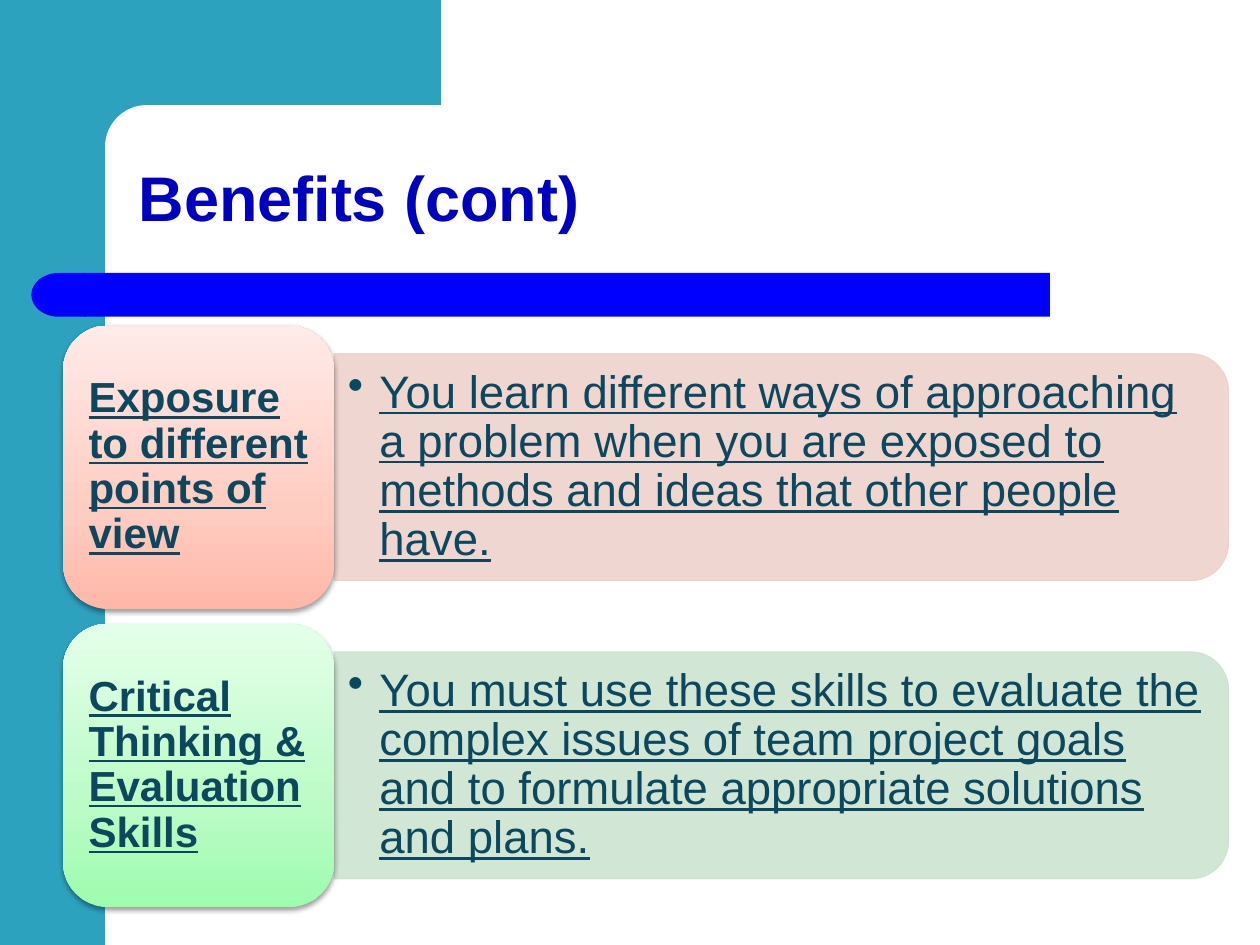
import pptx
import pptx.util
import pptx.dml.color
import pptx.enum.shapes
import pptx.enum.text
import pptx.oxml
import pptx.oxml.ns

Pt = pptx.util.Pt
RGB = pptx.dml.color.RGBColor
KIND = pptx.enum.shapes.MSO_SHAPE
ANCHOR = pptx.enum.text.MSO_ANCHOR
ALIGN = pptx.enum.text.PP_ALIGN
NS = pptx.oxml.ns.nsdecls("a")

TEAL = RGB(0x2D, 0xA2, 0xBF)
WHITE = RGB(0xFF, 0xFF, 0xFF)
BLUE = RGB(0x00, 0x00, 0xFF)
TITLE_BLUE = RGB(0x00, 0x00, 0xBF)
INK = RGB(0x0C, 0x47, 0x5D)
ROSE = RGB(0xEE, 0xD2, 0xCC)
SAGE = RGB(0xCC, 0xE4, 0xD0)
CORAL_STOPS = (RGB(0xFF, 0xB7, 0xA8), RGB(0xFF, 0xCC, 0xC1), RGB(0xFF, 0xEB, 0xE8))
GREEN_STOPS = (RGB(0x9D, 0xFC, 0xAE), RGB(0xBB, 0xFB, 0xC6), RGB(0xE4, 0xFF, 0xE9))

deck = pptx.Presentation()
deck.slide_width, deck.slide_height = Pt(720), Pt(540)
slide = deck.slides.add_slide(deck.slide_layouts[5])


def add_block(kind, left, top, width, height, color):
    block = slide.shapes.add_shape(kind, Pt(left), Pt(top), Pt(width), Pt(height))
    block.shadow.inherit = False
    block.fill.solid()
    block.fill.fore_color.rgb = color
    block.line.fill.background()
    return block


def write(frame, text, size, color, bold, underline):
    frame.word_wrap = True
    paragraph = frame.paragraphs[0]
    paragraph.alignment = ALIGN.LEFT
    paragraph.line_spacing = 0.9
    run = paragraph.add_run()
    run.text = text
    run.font.name = "Arial"
    run.font.size = Pt(size)
    run.font.bold = bold
    run.font.underline = underline
    run.font.color.rgb = color
    return paragraph


add_block(KIND.RECTANGLE, 0, 0, 60, 540, TEAL)
add_block(KIND.RECTANGLE, 54, 0, 198, 84, TEAL)
corner = add_block(KIND.ROUNDED_RECTANGLE, 60, 60, 402, 48, WHITE)
corner.adjustments[0] = 0.5
add_block(KIND.RECTANGLE, 48, 156, 552, 25, BLUE)
bar_end = add_block(KIND.FLOWCHART_DELAY, 18, 156, 31, 25, BLUE)
bar_end.element.spPr.xfrm.set("flipH", "1")

title = slide.shapes.title
title.left, title.top, title.width, title.height = Pt(72), Pt(60), Pt(630), Pt(78)
title.text_frame.vertical_anchor = ANCHOR.BOTTOM
write(title.text_frame, "Benefits (cont)", 36, TITLE_BLUE, True, False)
bar_end.element.addnext(title.element)

benefits = [
    ("Exposure to different points of view",
     "You learn different ways of approaching a problem when you are exposed to "
     "methods and ideas that other people have.",
     ROSE, CORAL_STOPS),
    ("Critical Thinking & Evaluation Skills",
     "You must use these skills to evaluate the complex issues of team project goals "
     "and to formulate appropriate solutions and plans.",
     SAGE, GREEN_STOPS),
]
PANEL_LENGTH, PANEL_DEPTH = 511, 129.6
CARD_HEIGHT, ROW_PITCH = 162, 170.4

for row, (benefit, explanation, panel_color, stops) in enumerate(benefits):
    top = 186 + row * ROW_PITCH
    middle = top + CARD_HEIGHT / 2

    panel = add_block(KIND.ROUND_2_SAME_RECTANGLE,
                      191 + (PANEL_LENGTH - PANEL_DEPTH) / 2, middle - PANEL_LENGTH / 2,
                      PANEL_DEPTH, PANEL_LENGTH, panel_color)
    panel.rotation = 90
    panel.line.color.rgb = panel_color
    panel.line.width = Pt(0.75)
    for color in panel.element.spPr.iter(pptx.oxml.ns.qn("a:srgbClr")):
        color.append(pptx.oxml.parse_xml(f'<a:alpha {NS} val="90000"/>'))

    detail = slide.shapes.add_textbox(Pt(191), Pt(middle - 58), Pt(505), Pt(116))
    detail.text_frame.vertical_anchor = ANCHOR.MIDDLE
    detail.text_frame.margin_left = detail.text_frame.margin_right = Pt(7.8)
    bullet = write(detail.text_frame, explanation, 26, INK, False, True)
    properties = bullet._p.get_or_add_pPr()
    properties.set("marL", str(Pt(18)))
    properties.set("indent", str(-Pt(18)))
    properties.append(pptx.oxml.parse_xml(f'<a:buChar {NS} char="•"/>'))

    card = add_block(KIND.ROUNDED_RECTANGLE, 36, top, 155, CARD_HEIGHT, stops[0])
    gradient = "".join(
        f'<a:gs pos="{place}"><a:srgbClr val="{color}"/></a:gs>'
        for place, color in zip((0, 35000, 100000), stops))
    shape_properties = card.element.spPr
    shape_properties.replace(
        shape_properties.find(pptx.oxml.ns.qn("a:solidFill")),
        pptx.oxml.parse_xml(f'<a:gradFill {NS} rotWithShape="1"><a:gsLst>{gradient}</a:gsLst>'
                            '<a:lin ang="16200000" scaled="0"/></a:gradFill>'))
    shape_properties.find(pptx.oxml.ns.qn("a:effectLst")).append(pptx.oxml.parse_xml(
        f'<a:outerShdw {NS} blurRad="{Pt(3.1)}" dist="{Pt(1.6)}" dir="5400000" rotWithShape="0">'
        '<a:srgbClr val="000000"><a:alpha val="38000"/></a:srgbClr></a:outerShdw>'))
    card.text_frame.vertical_anchor = ANCHOR.MIDDLE
    card.text_frame.margin_left = Pt(7.2)
    card.text_frame.margin_right = Pt(5)
    write(card.text_frame, benefit, 24, INK, True, True)

deck.save("out.pptx")
